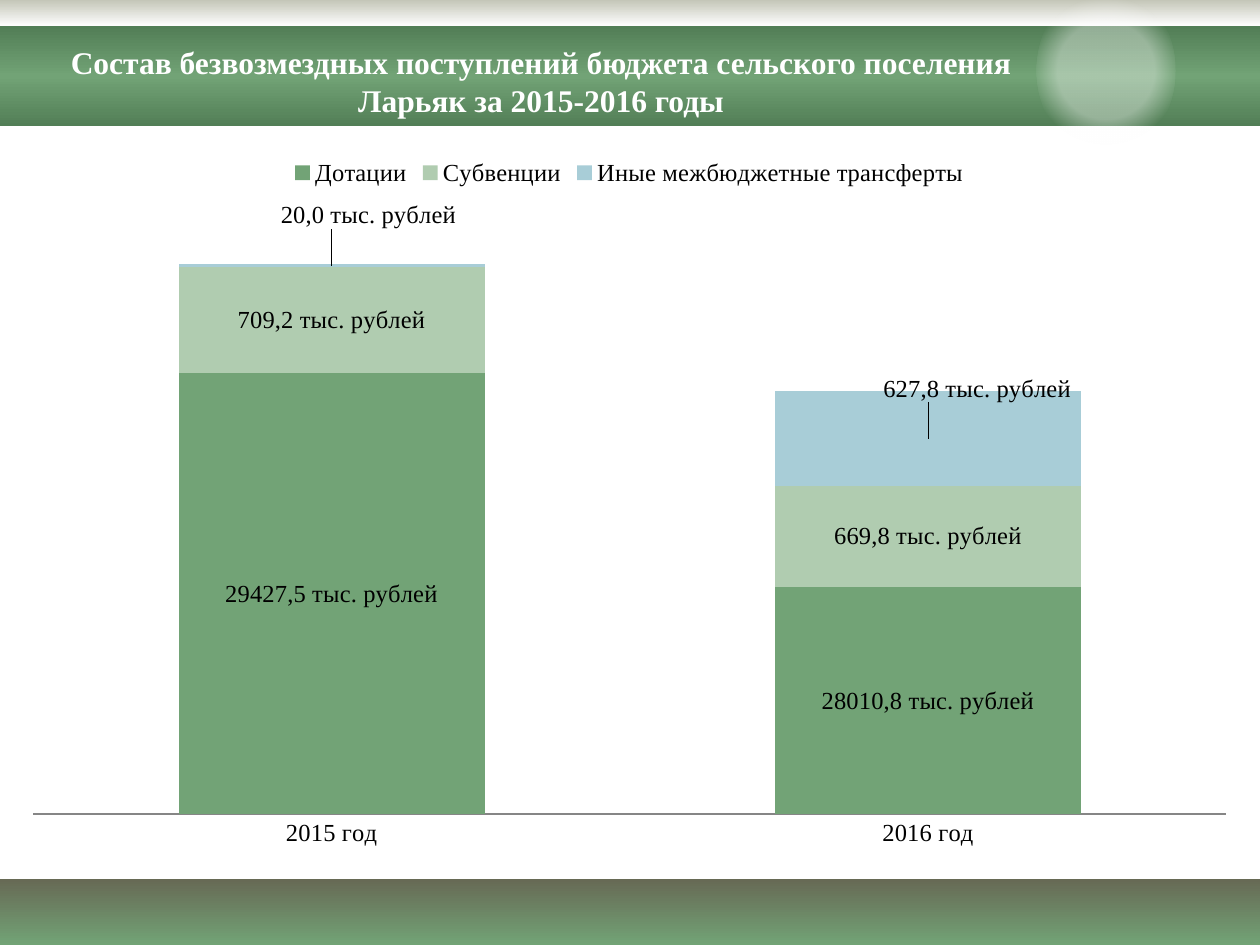
from pptx import Presentation
from pptx import oxml
from pptx import util as u
from pptx.chart.data import CategoryChartData
from pptx.dml.color import RGBColor
from pptx.enum import chart as ch, shapes, text
from pptx.oxml import ns

GREEN = RGBColor(0x72, 0xA3, 0x76)
DARK_GREEN = RGBColor(0x52, 0x7E, 0x56)
PALE_GREEN = RGBColor(0xB0, 0xCC, 0xB0)
PALE_BLUE = RGBColor(0xA8, 0xCD, 0xD7)
OLIVE = RGBColor(0x67, 0x6A, 0x55)
SAND = RGBColor(0xC4, 0xC6, 0xB8)
GRAY = RGBColor(0x86, 0x86, 0x86)
WHITE = RGBColor(0xFF, 0xFF, 0xFF)
BLACK = RGBColor(0, 0, 0)


def write(tf, words, font="Times New Roman", size=14, color=BLACK, bold=False, align=None):
    """Put one formatted run into a text frame."""
    p = tf.paragraphs[0]
    p.alignment = align
    r = p.add_run()
    r.text = words
    r.font.name = font
    r.font.size = u.Pt(size)
    r.font.bold = bold
    r.font.color.rgb = color


def manual_layout(inner=False, **places):
    """Make a chart layout element from x, y, w and h fractions."""
    target = '<c:layoutTarget val="inner"/>' if inner else ""
    modes = '<c:xMode val="edge"/><c:yMode val="edge"/>' if inner else ""
    values = "".join(f'<c:{k} val="{v}"/>' for k, v in places.items())
    return oxml.parse_xml(
        f'<c:layout {ns.nsdecls("c")}><c:manualLayout>{target}{modes}{values}'
        "</c:manualLayout></c:layout>")


class Deck:
    font = "Times New Roman"

    def __init__(self, prs):
        self.s = prs.slides.add_slide(prs.slide_layouts[6])

    def gradient(self, kind, x, y, w, h, stops, circle=False):
        """Add a shape; stops are (position %, colour, opacity %)."""
        sp = self.s.shapes.add_shape(kind, *map(u.Inches, (x, y, w, h)))
        sp.shadow.inherit = False
        sp.line.fill.background()
        sp.fill.background()
        marks = "".join(
            f'<a:gs pos="{pos * 1000}"><a:srgbClr val="{color}">'
            f'<a:alpha val="{alpha * 1000}"/></a:srgbClr></a:gs>'
            for pos, color, alpha in stops)
        way = ('<a:path path="circle"><a:fillToRect l="50000" t="50000" r="50000" b="50000"/></a:path>'
               if circle else '<a:lin ang="5400000" scaled="0"/>')
        fill = oxml.parse_xml(
            f'<a:gradFill {ns.nsdecls("a")} rotWithShape="1"><a:gsLst>{marks}</a:gsLst>{way}</a:gradFill>')
        props = sp._element.spPr
        props.replace(props.find(ns.qn("a:noFill")), fill)

    def band(self, y, h, *colors):
        """Add a full-width bar with evenly spaced vertical colours."""
        step = 100 // (len(colors) - 1)
        stops = [(i * step, color, 100) for i, color in enumerate(colors)]
        self.gradient(shapes.MSO_SHAPE.RECTANGLE, 0, y, 10, h, stops)

    def title(self, x, y, w, h, words):
        tf = self.s.shapes.add_textbox(*map(u.Inches, (x, y, w, h))).text_frame
        tf.word_wrap = True
        tf.auto_size = text.MSO_AUTO_SIZE.SHAPE_TO_FIT_TEXT
        write(tf, words, size=18, color=WHITE, bold=True, align=text.PP_ALIGN.CENTER)

    def stacked_chart(self, x, y, w, h, cats, series, shifts):
        """series: (name, values, colour); shifts: (series, point) to label offset."""
        data = CategoryChartData(number_format="0.0")
        data.categories = cats
        for name, values, _ in series:
            data.add_series(name, values)
        chart = self.s.shapes.add_chart(
            ch.XL_CHART_TYPE.COLUMN_STACKED, *map(u.Inches, (x, y, w, h)), data).chart
        chart.font.name = self.font
        chart.font.size = u.Pt(10)
        chart.font.color.rgb = BLACK
        chart.has_title = False

        # Legend
        chart.has_legend = True
        chart.legend.position = ch.XL_LEGEND_POSITION.TOP
        chart.legend.include_in_layout = False
        chart.legend.font.size = u.Pt(14)

        # Axes
        cat, val = chart.category_axis, chart.value_axis
        cat.major_tick_mark = ch.XL_TICK_MARK.NONE
        cat.tick_labels.font.size = u.Pt(14)
        cat.format.line.color.rgb = GRAY
        cat.format.line.width = u.Pt(1)
        val.visible = False
        val.has_major_gridlines = False
        val.minimum_scale, val.maximum_scale = 26500, 30500

        # Plot area
        plot = chart.plots[0]
        plot.gap_width, plot.overlap = 95, 100
        plot.vary_by_categories = False
        area = chart._chartSpace.chart.plotArea
        for old in area.findall(ns.qn("c:layout")):
            area.remove(old)
        area.insert(0, manual_layout(inner=True, x=0.016, y=0.094, w=0.969, h=0.843))

        # Columns and their labels
        for i, (ser, (_, values, color)) in enumerate(zip(plot.series, series)):
            ser.format.fill.solid()
            ser.format.fill.fore_color.rgb = color
            ser.data_labels.show_value = True
            ser.data_labels.font.size = u.Pt(14)
            for j, value in enumerate(values):
                words = f"{value:.1f}".replace(".", ",") + " тыс. рублей"
                write(ser.points[j].data_label.text_frame, words)
                if (i, j) in shifts:
                    dx, dy = shifts[i, j]
                    label = ser.data_labels._element.findall(ns.qn("c:dLbl"))[j]
                    for old in label.findall(ns.qn("c:layout")):
                        label.remove(old)
                    label.insert(1, manual_layout(x=dx, y=dy))


def main():
    prs = Presentation()
    prs.slide_width, prs.slide_height = u.Inches(10), u.Inches(7.5)
    deck = Deck(prs)

    # Background bands and glow
    deck.band(6.98, 0.52, OLIVE, GREEN)
    deck.band(0, 0.21, SAND, WHITE)
    deck.band(0.21, 0.79, DARK_GREEN, GREEN, DARK_GREEN)
    deck.gradient(shapes.MSO_SHAPE.OVAL, 8.23, -0.11, 1.1, 1.34,
                  [(44, WHITE, 38), (67, WHITE, 0)], circle=True)

    # Heading
    deck.title(0.11, 0.29, 8.37, 0.71,
               "Состав безвозмездных поступлений бюджета сельского поселения Ларьяк за 2015-2016 годы")

    # Revenue chart
    deck.stacked_chart(
        0.11, 1.15, 9.77, 5.67, ["2015 год", "2016 год"],
        [("Дотации", (29427.5, 28010.8), GREEN),
         ("Субвенции", (709.2, 669.8), PALE_GREEN),
         ("Иные межбюджетные трансферты", (20, 627.8), PALE_BLUE)],
        shifts={(2, 0): (0.03, -0.07), (2, 1): (0.04, -0.07)})

    prs.save("out.pptx")


if __name__ == "__main__":
    main()
